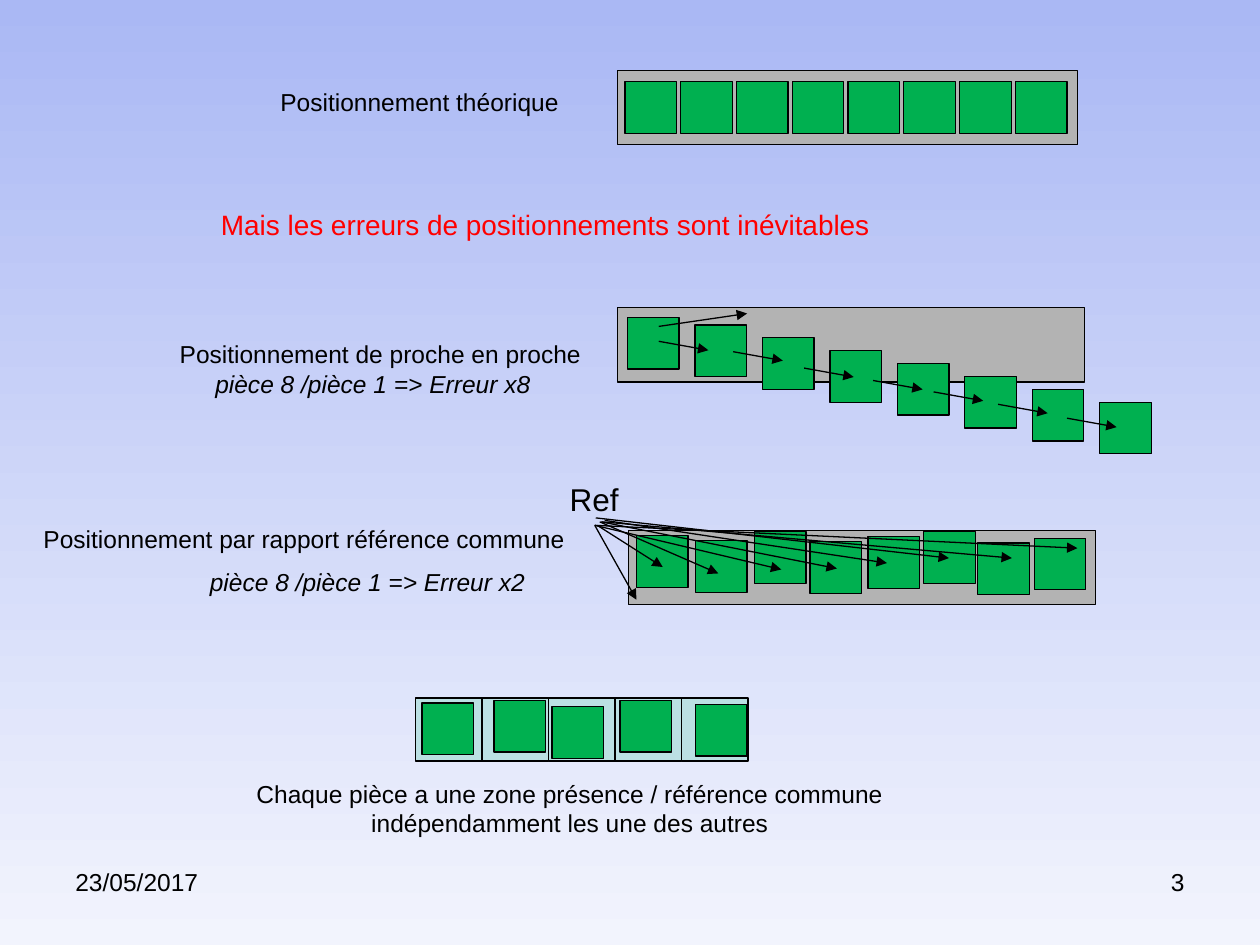
from dataclasses import dataclass

from lxml.etree import SubElement
from pptx import Presentation
from pptx.dml.color import RGBColor as RGB
from pptx.enum.shapes import MSO_CONNECTOR as CONN, MSO_SHAPE as SHAPE
from pptx.enum.text import PP_ALIGN as ALIGN
from pptx.oxml.ns import qn
from pptx.util import Cm, Pt


@dataclass(frozen=True)
class Theme:
    font: str = "Arial"
    ink: RGB = RGB(0, 0, 0)
    alert: RGB = RGB(0xFF, 0, 0)
    plate: RGB = RGB(0xB3, 0xB3, 0xB3)
    piece: RGB = RGB(0, 0xB0, 0x50)
    zone: RGB = RGB(0xBB, 0xE0, 0xE3)
    sky: tuple = (RGB(0xAA, 0xB8, 0xF4), RGB(0xF2, 0xF4, 0xFD))
    body: int = 14
    message: int = 16
    ref: int = 18
    line: float = 0.75


T = Theme()
PIECE = 1.04
PLATE_H = 1.5


def paint_background(s):
    fill = s.background.fill
    fill.gradient()
    fill.gradient_angle = 270
    for stop, color in zip(fill.gradient_stops, T.sky):
        stop.color.rgb = color


def add_text(shapes, box, lines, size=T.body, color=T.ink, italic=False,
             align=ALIGN.CENTER, wrap=False):
    tf = shapes.add_textbox(*map(Cm, box)).text_frame
    tf.word_wrap = wrap
    p = tf.paragraphs[0]
    p.alignment = align
    for i, line in enumerate(lines):
        if i:
            p.add_line_break()
        r = p.add_run()
        r.text = line
        r.font.name, r.font.size = T.font, Pt(size)
        r.font.italic = italic
        r.font.color.rgb = color


def add_rect(shapes, box, color):
    sp = shapes.add_shape(SHAPE.RECTANGLE, *map(Cm, box))
    sp.shadow.inherit = False
    sp.fill.solid()
    sp.fill.fore_color.rgb = color
    sp.line.color.rgb = T.ink
    sp.line.width = Pt(T.line)


def add_pieces(shapes, corners):
    for x, y in corners:
        add_rect(shapes, (x, y, PIECE, PIECE), T.piece)


def add_arrow(shapes, start, end):
    c = shapes.add_connector(CONN.STRAIGHT, *map(Cm, start + end))
    c.line.color.rgb = T.ink
    c.line.width = Pt(T.line)
    sp_pr = c.element.spPr
    SubElement(sp_pr.find(qn("a:ln")), qn("a:tailEnd"), type="triangle")
    SubElement(sp_pr, qn("a:effectLst"))


def add_ideal_row(s):
    shapes = s.shapes.add_group_shape().shapes
    add_rect(shapes, (12.45, 1.42, 9.27, PLATE_H), T.plate)
    first, last = 12.6, 20.47
    step = (last - first) / 7
    add_pieces(shapes, [(first + step * i, 1.65) for i in range(8)])


def add_chained_row(s):
    """Each piece is placed from the one before, so the row drifts down."""
    shapes = s.shapes.add_group_shape().shapes
    add_rect(shapes, (12.45, 6.2, 9.42, PLATE_H), T.plate)
    add_pieces(shapes, [(12.65, 6.4)])
    add_pieces(shapes, [(12.65 + 1.36 * i, 6.29 + 0.26 * i) for i in range(1, 8)])
    starts = [(13.28, 6.88), (14.78, 7.09), (16.21, 7.42), (17.6, 7.67),
              (18.82, 7.9), (20.12, 8.15), (21.51, 8.43)]
    for x, y in starts:
        add_arrow(shapes, (x, y), (x + 1, y + 0.18))
    add_arrow(shapes, (13.28, 6.58), (15.06, 6.32))


def add_reference_row(s):
    """Every piece is placed from the same reference point."""
    shapes = s.shapes.add_group_shape().shapes
    add_rect(shapes, (12.67, 10.69, 9.42, PLATE_H), T.plate)
    add_pieces(shapes, [(12.83, 10.8), (14.02, 10.9), (15.21, 10.72),
                        (16.33, 10.92), (17.5, 10.82), (18.62, 10.72),
                        (19.71, 10.95), (20.85, 10.85)])
    add_text(shapes, (11.23, 9.55, 1.5, 1.02), ["Ref"], size=T.ref)
    arrows = [((11.99, 10.59), (12.83, 12.09)), ((12.04, 10.59), (13.36, 11.43)),
              ((12.09, 10.52), (14.48, 11.56)), ((11.99, 10.59), (15.75, 11.48)),
              ((12.12, 10.52), (16.87, 11.46)), ((12.19, 10.49), (17.88, 11.35)),
              ((12.01, 10.44), (19.13, 11.25)), ((12.14, 10.52), (20.4, 11.25)),
              ((11.99, 10.59), (21.72, 11.05))]
    for start, end in arrows:
        add_arrow(shapes, start, end)


def add_zone_row(s):
    shapes = s.shapes.add_group_shape().shapes
    corners = [(8.51, 14.17), (9.96, 14.12), (11.13, 14.25),
               (12.5, 14.12), (14.02, 14.2)]
    for i, corner in enumerate(corners):
        add_rect(shapes, (8.38 + 1.34 * i, 14.07, 1.34, 1.27), T.zone)
        add_pieces(shapes, [corner])


def add_captions(s):
    add_text(s.shapes, (5.31, 1.63, 6.3, 0.86), ["Positionnement théorique"])
    add_text(s.shapes, (4.19, 4.06, 13.61, 0.94),
             ["Mais les erreurs de positionnements sont inévitables"],
             size=T.message, color=T.alert)
    add_text(s.shapes, (3.35, 6.71, 8.64, 0.86),
             ["Positionnement de proche en proche"])
    add_text(s.shapes, (4.01, 7.32, 7.16, 0.86),
             ["pièce 8 /pièce 1 => Erreur x8 "], italic=True)
    add_text(s.shapes, (0.61, 10.44, 11.05, 0.86),
             ["Positionnement par rapport référence commune"])
    add_text(s.shapes, (3.96, 11.3, 7.04, 0.86),
             ["pièce 8 /pièce 1 => Erreur x2 "], italic=True)
    add_text(s.shapes, (4.9, 15.57, 13.18, 1.45),
             ["Chaque pièce a une zone présence / référence commune",
              "indépendamment les une des autres"])


def add_footer(s):
    add_text(s.shapes, (1.27, 17.35, 5.92, 1.32), ["23/05/2017"],
             align=ALIGN.LEFT, wrap=True)
    add_text(s.shapes, (18.21, 17.35, 5.92, 1.32), ["3"],
             align=ALIGN.RIGHT, wrap=True)


def main():
    prs = Presentation()
    prs.slide_width, prs.slide_height = Cm(25.4), Cm(19.05)
    s = prs.slides.add_slide(prs.slide_layouts[6])
    paint_background(s)
    add_footer(s)
    add_ideal_row(s)
    add_chained_row(s)
    add_reference_row(s)
    add_captions(s)
    add_zone_row(s)
    prs.save("out.pptx")


if __name__ == "__main__":
    main()
